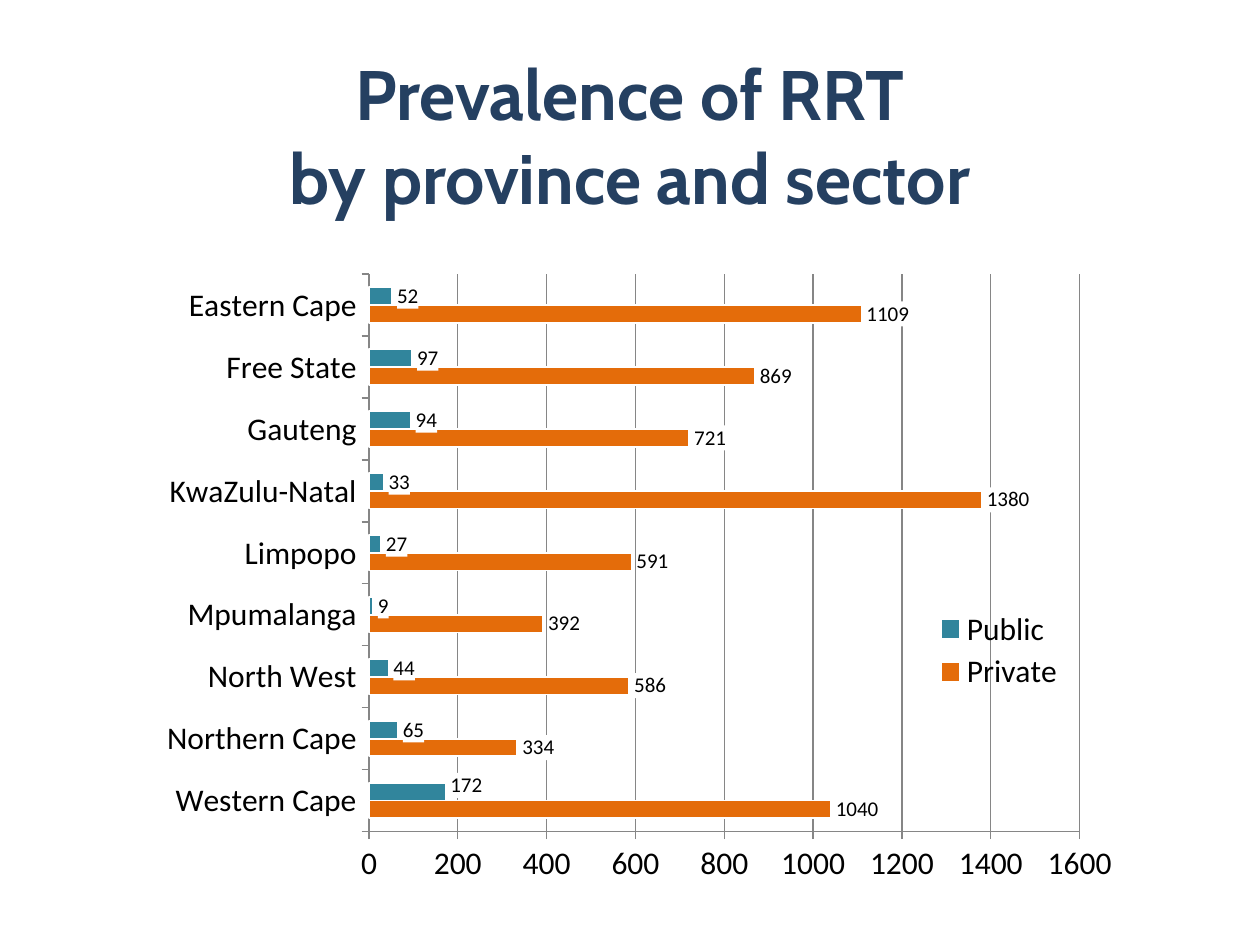
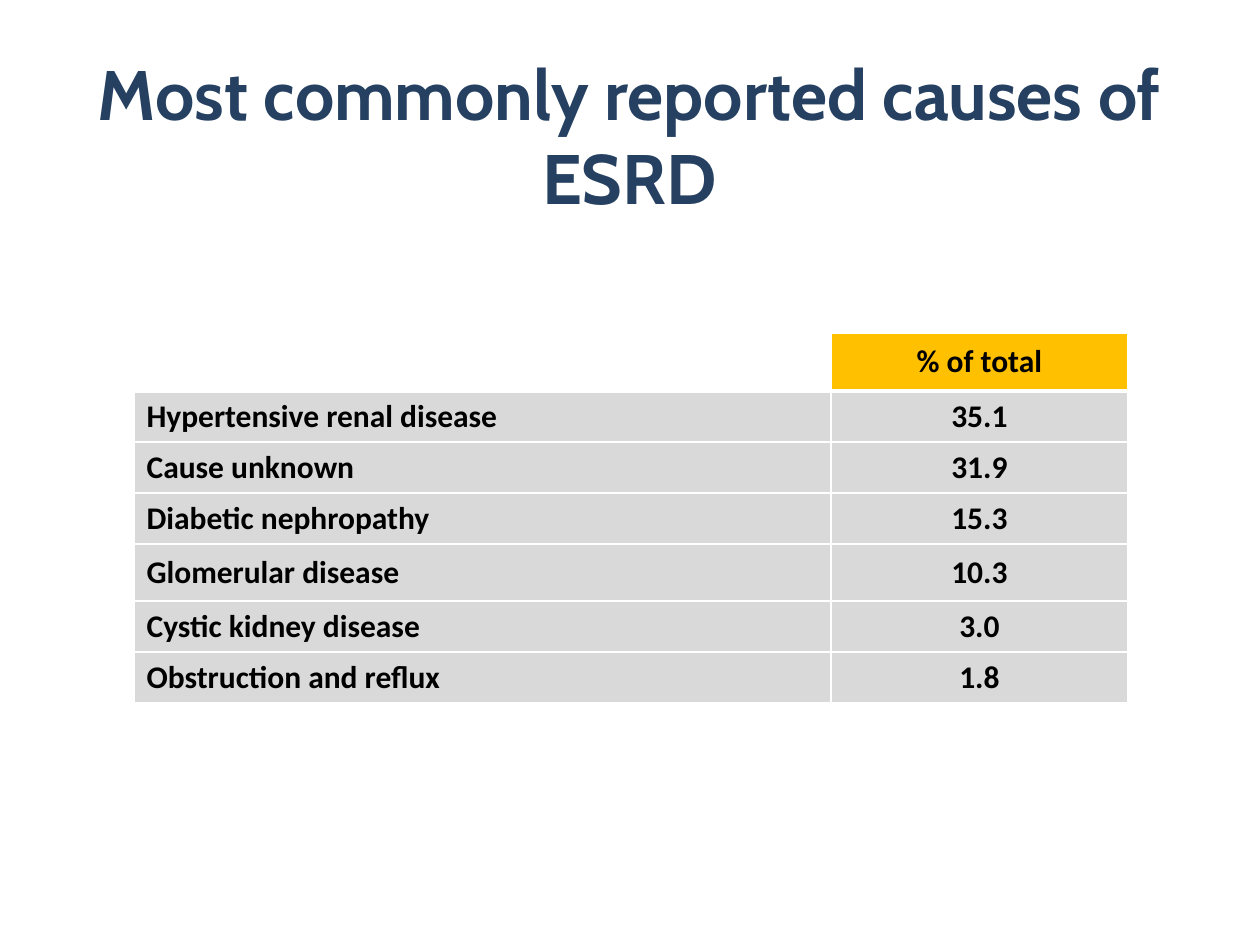
from dataclasses import dataclass

from pptx import Presentation
from pptx.chart.data import CategoryChartData
from pptx.dml.color import RGBColor
from pptx.enum.chart import XL_CHART_TYPE, XL_LABEL_POSITION, XL_LEGEND_POSITION, XL_TICK_MARK
from pptx.enum.text import MSO_ANCHOR, PP_ALIGN
from pptx.oxml import parse_xml
from pptx.oxml.ns import nsdecls
from pptx.util import Emu, Pt

PX_PER_INCH = 126


@dataclass(frozen=True)
class Theme:
    title_font: str = "Cabin"
    body_font: str = "Calibri"
    title_size: int = 40
    body_size: int = 18
    label_size: int = 12
    navy: str = "254061"
    black: str = "000000"
    white: str = "FFFFFF"
    grid: str = "868686"
    public: str = "31859C"
    private: str = "E46C0A"
    header: str = "FFC000"
    row: str = "D9D9D9"


THEME = Theme()

PROVINCES = [  # name, public, private
    ("Western Cape", 172, 1040),
    ("Northern Cape", 65, 334),
    ("North West", 44, 586),
    ("Mpumalanga", 9, 392),
    ("Limpopo", 27, 591),
    ("KwaZulu-Natal", 33, 1380),
    ("Gauteng", 94, 721),
    ("Free State", 97, 869),
    ("Eastern Cape", 52, 1109),
]

CAUSES = [  # cause, share, row height in px
    ("", "% of total", 58),
    ("Hypertensive renal disease", "35.1", 51),
    ("Cause unknown", "31.9", 51),
    ("Diabetic nephropathy", "15.3", 51),
    ("Glomerular disease", "10.3", 57),
    ("Cystic kidney disease", "3.0", 51),
    ("Obstruction and reflux", "1.8", 51),
]


def px(length):
    return Emu(round(length * 914400 / PX_PER_INCH))


def rgb(colour):
    return RGBColor.from_string(colour)


def style_font(font, name, size, colour, bold=False):
    font.name, font.size, font.bold = name, Pt(size), bold
    font.color.rgb = rgb(colour)


def add_title(page, box, lines):
    frame = page.shapes.add_textbox(*map(px, box)).text_frame
    frame.word_wrap = True
    frame.vertical_anchor = MSO_ANCHOR.MIDDLE
    para = frame.paragraphs[0]
    para.alignment = PP_ALIGN.CENTER
    for index, line in enumerate(lines):
        if index:
            para.add_line_break()
        span = para.add_run()
        span.text = line
        style_font(span.font, THEME.title_font, THEME.title_size, THEME.navy, bold=True)


def set_layout(parent, index, settings):
    """Give a chart part a manual layout, inserted at its place in the schema order."""
    for old in parent.xpath("c:layout"):
        parent.remove(old)
    items = "".join(f'<c:{key} val="{value}"/>' for key, value in settings.items())
    parent.insert(index, parse_xml(
        f"<c:layout {nsdecls('c')}><c:manualLayout>{items}</c:manualLayout></c:layout>"))


def add_label_background(labels):
    """Put a white fill behind data labels so gridlines do not cross them."""
    for old in labels.xpath("c:spPr"):
        labels.remove(old)
    labels.xpath("c:txPr")[0].addprevious(parse_xml(
        f'<c:spPr {nsdecls("c", "a")}><a:solidFill><a:srgbClr val="{THEME.white}"/>'
        "</a:solidFill></c:spPr>"))


def style_series(series, colour):
    series.format.fill.solid()
    series.format.fill.fore_color.rgb = rgb(colour)
    series.format.line.color.rgb = rgb(THEME.white)
    series.format.line.width = Pt(1)
    series.invert_if_negative = False
    labels = series.data_labels
    labels.show_value = True
    labels.number_format, labels.number_format_is_linked = "0", False
    labels.position = XL_LABEL_POSITION.OUTSIDE_END
    style_font(labels.font, THEME.body_font, THEME.label_size, THEME.black)


def style_axis(axis):
    axis.major_tick_mark = XL_TICK_MARK.OUTSIDE
    axis.minor_tick_mark = XL_TICK_MARK.NONE
    axis.format.line.color.rgb = rgb(THEME.grid)
    style_font(axis.tick_labels.font, THEME.body_font, THEME.body_size, THEME.black)


def add_sector_chart(page, box):
    names, public, private = zip(*PROVINCES)
    data = CategoryChartData(number_format="0")
    data.categories = names
    data.add_series("Private", private)
    data.add_series("Public", public)
    chart = page.shapes.add_chart(XL_CHART_TYPE.BAR_CLUSTERED, *map(px, box), data).chart
    chart.has_title = False
    style_font(chart.font, THEME.body_font, THEME.body_size, THEME.black)

    plot = chart.plots[0]
    plot.gap_width, plot.overlap, plot.vary_by_categories = 150, 0, False
    for series, colour in zip(plot.series, (THEME.private, THEME.public)):
        style_series(series, colour)

    style_axis(chart.category_axis)
    chart.category_axis.has_major_gridlines = False
    values = chart.value_axis
    style_axis(values)
    values.minimum_scale, values.maximum_scale, values.major_unit = 0, 1600, 200
    values.has_major_gridlines = True
    values.major_gridlines.format.line.color.rgb = rgb(THEME.grid)
    values.tick_labels.number_format = "0"
    values.tick_labels.number_format_is_linked = False

    chart.has_legend = True
    chart.legend.position = XL_LEGEND_POSITION.RIGHT
    chart.legend.include_in_layout = False
    style_font(chart.legend.font, THEME.body_font, THEME.body_size, THEME.black)

    western_cape = plot.series[1].points[0].data_label
    style_font(western_cape.font, THEME.body_font, THEME.label_size, THEME.black)
    western_cape.position = XL_LABEL_POSITION.OUTSIDE_END

    root = chart.element
    for labels in root.xpath(".//c:dLbls | .//c:dLbl"):
        add_label_background(labels)
    set_layout(root.xpath(".//c:dLbl")[0], 1, {"x": 0, "y": -0.01})
    set_layout(root.xpath(".//c:plotArea")[0], 0, {
        "layoutTarget": "inner", "xMode": "edge", "yMode": "edge",
        "x": 0.234, "y": 0.03, "w": 0.723, "h": 0.874})
    legend = root.xpath(".//c:legend")[0]
    set_layout(legend, len(legend.xpath("c:legendPos")), {
        "xMode": "edge", "yMode": "edge", "x": 0.81, "y": 0.55, "w": 0.13, "h": 0.14})


def add_borders(cell, bottom):
    """Draw white cell borders, with the bottom one at its own width in points."""
    properties = cell._tc.get_or_add_tcPr()
    for side, width in zip("LRTB", (1, 1, 1, bottom)):
        properties.append(parse_xml(
            f'<a:ln{side} {nsdecls("a")} w="{Pt(width)}"><a:solidFill>'
            f'<a:srgbClr val="{THEME.white}"/></a:solidFill></a:ln{side}>'))


def fill_cell(cell, text, colour, alignment, bottom):
    add_borders(cell, bottom)
    cell.vertical_anchor = MSO_ANCHOR.MIDDLE
    if not text:
        cell.fill.background()
        return
    cell.fill.solid()
    cell.fill.fore_color.rgb = rgb(colour)
    para = cell.text_frame.paragraphs[0]
    para.alignment = alignment
    span = para.add_run()
    span.text = text
    style_font(span.font, THEME.body_font, THEME.body_size, THEME.black, bold=True)


def add_causes_table(page, left, top, widths):
    height = sum(row[2] for row in CAUSES)
    box = (left, top, sum(widths), height)
    table = page.shapes.add_table(len(CAUSES), len(widths), *map(px, box)).table
    table.first_row = table.horz_banding = False
    for column, width in zip(table.columns, widths):
        column.width = px(width)
    for index, (cause, share, row_height) in enumerate(CAUSES):
        table.rows[index].height = px(row_height)
        colour, bottom = (THEME.row, 1) if index else (THEME.header, 3)
        fill_cell(table.cell(index, 0), cause, colour, PP_ALIGN.LEFT, bottom)
        fill_cell(table.cell(index, 1), share, colour, PP_ALIGN.CENTER, bottom)


def main():
    deck = Presentation()
    deck.slide_width, deck.slide_height = px(1260), px(945)
    blank = deck.slide_layouts[6]

    page = deck.slides.add_slide(blank)
    add_sector_chart(page, (139, 255, 983, 638))
    add_title(page, (0, 55, 1260, 158), ["Prevalence of RRT", "by province and sector"])

    page = deck.slides.add_slide(blank)
    add_title(page, (74, 55, 1111, 158), ["Most commonly reported causes of ESRD"])
    add_causes_table(page, 134, 333, (697, 297))

    deck.save("out.pptx")


if __name__ == "__main__":
    main()
